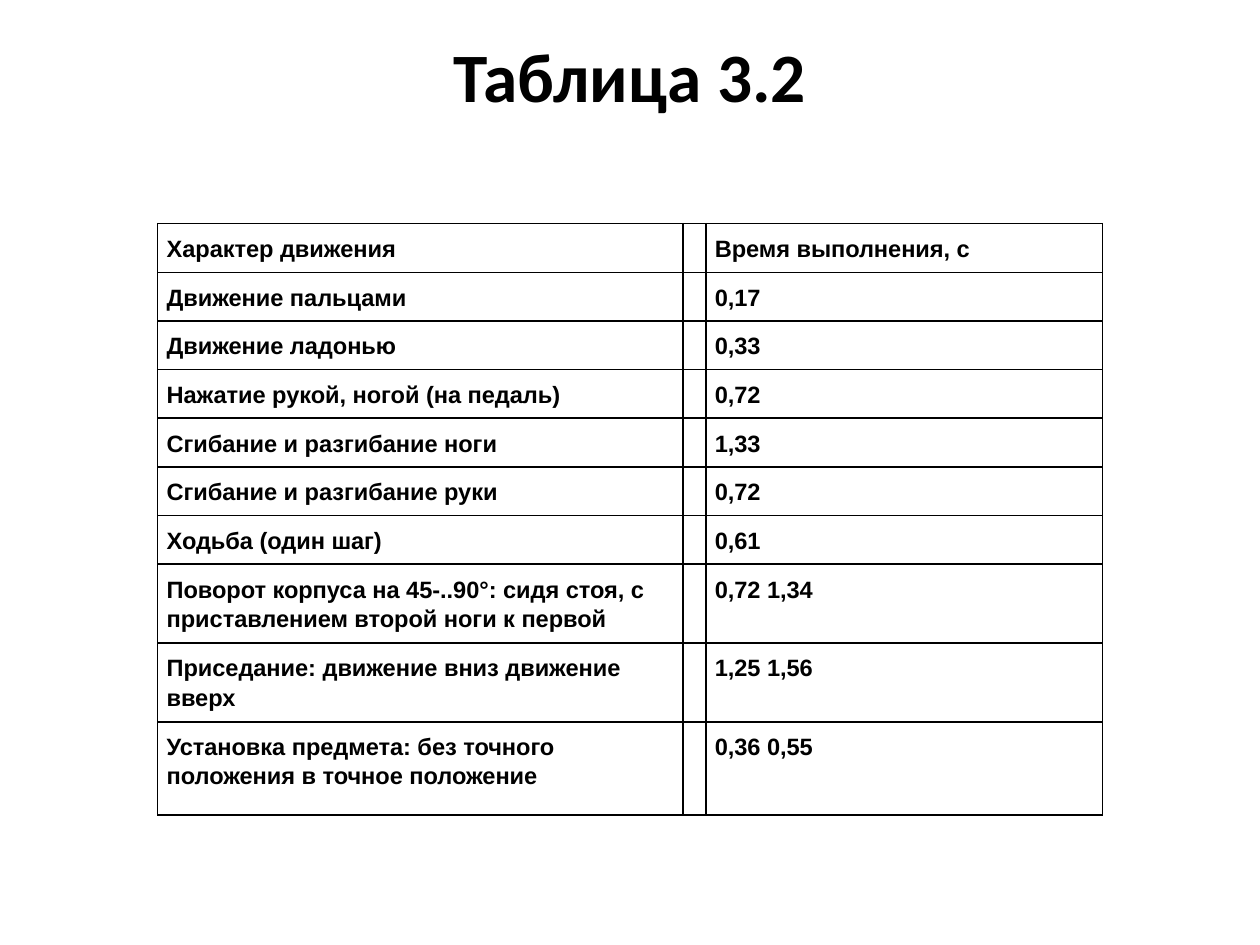
from dataclasses import dataclass

from lxml.etree import SubElement
from pptx import Presentation
from pptx.dml.color import RGBColor
from pptx.enum.text import MSO_ANCHOR, PP_ALIGN
from pptx.oxml.ns import qn
from pptx.util import Cm, Pt


@dataclass(frozen=True)
class Theme:
    ink: str = "000000"
    paper: str = "FFFFFF"
    title_font: str = "Calibri"
    table_font: str = "Arial"
    title_size: float = 39.6
    table_size: float = 13.5
    border_width: float = 1


THEME = Theme()

COLUMN_WIDTHS = (10.59, 0.46, 8.0)
ONE_LINE, TWO_LINES, LAST_ROW = 0.98, 1.59, 1.88
SIDE_MARGIN, TOP_MARGIN, BOTTOM_MARGIN = Cm(0.18), Cm(0.2), Cm(0.12)

MOVEMENTS = [
    ("Характер движения", "Время выполнения, с", ONE_LINE),
    ("Движение пальцами", "0,17", ONE_LINE),
    ("Движение ладонью", "0,33", ONE_LINE),
    ("Нажатие рукой, ногой (на педаль)", "0,72", ONE_LINE),
    ("Сгибание и разгибание ноги", "1,33", ONE_LINE),
    ("Сгибание и разгибание руки", "0,72", ONE_LINE),
    ("Ходьба (один шаг)", "0,61", ONE_LINE),
    ("Поворот корпуса на 45-..90°: сидя стоя, с приставлением второй ноги к первой",
     "0,72 1,34", TWO_LINES),
    ("Приседание: движение вниз движение вверх", "1,25 1,56", TWO_LINES),
    ("Установка предмета: без точного положения в точное положение",
     "0,36 0,55", LAST_ROW),
]


def style_font(para, name, size):
    font = para.font
    font.name = name
    font.size = Pt(size)
    font.bold = True
    font.color.rgb = RGBColor.from_string(THEME.ink)


def add_title(page, text):
    box = page.shapes.add_textbox(Cm(1.27), Cm(0.67), Cm(22.86), Cm(3.26))
    frame = box.text_frame
    frame.word_wrap = True
    frame.vertical_anchor = MSO_ANCHOR.TOP
    frame.margin_top = 0
    para = frame.paragraphs[0]
    para.text = text
    para.alignment = PP_ALIGN.CENTER
    style_font(para, THEME.title_font, THEME.title_size)


def add_borders(cell):
    """Draw all four sides; the lines must precede the fill in the cell's XML."""
    properties = cell._tc.get_or_add_tcPr()
    for side in ("a:lnL", "a:lnR", "a:lnT", "a:lnB"):
        line = SubElement(properties, qn(side), w=str(Pt(THEME.border_width)))
        fill = SubElement(line, qn("a:solidFill"))
        SubElement(fill, qn("a:srgbClr"), val=THEME.ink)


def fill_cell(cell, text):
    add_borders(cell)
    cell.fill.solid()
    cell.fill.fore_color.rgb = RGBColor.from_string(THEME.paper)
    cell.margin_left = cell.margin_right = SIDE_MARGIN
    cell.margin_top, cell.margin_bottom = TOP_MARGIN, BOTTOM_MARGIN
    para = cell.text_frame.paragraphs[0]
    if text:
        para.text = text
    para.line_spacing = 1.11
    style_font(para, THEME.table_font, THEME.table_size)


def add_movement_table(page):
    width = sum(COLUMN_WIDTHS)
    height = sum(row_height for *_, row_height in MOVEMENTS)
    table = page.shapes.add_table(
        len(MOVEMENTS), len(COLUMN_WIDTHS),
        Cm(3.18), Cm(4.51), Cm(width), Cm(height)).table
    table.first_row = table.horz_banding = False
    for column, column_width in zip(table.columns, COLUMN_WIDTHS):
        column.width = Cm(column_width)
    for row, (movement, seconds, row_height) in zip(table.rows, MOVEMENTS):
        row.height = Cm(row_height)
        for cell, text in zip(row.cells, (movement, "", seconds)):
            fill_cell(cell, text)


def main():
    deck = Presentation()
    deck.slide_width, deck.slide_height = Cm(25.4), Cm(19.05)
    page = deck.slides.add_slide(deck.slide_layouts[6])
    add_title(page, "Таблица 3.2")
    add_movement_table(page)
    deck.save("out.pptx")


if __name__ == "__main__":
    main()
